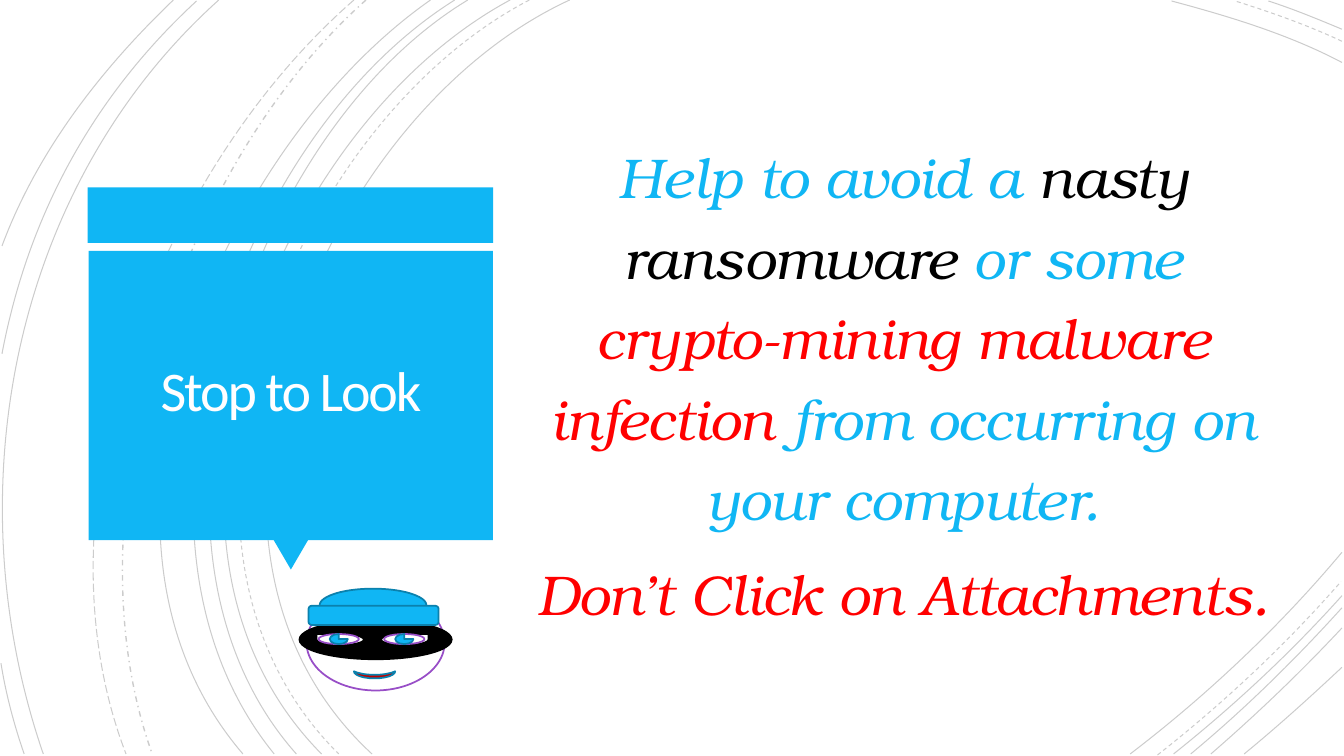
from lxml.etree import SubElement
from pptx import Presentation
from pptx.dml.color import RGBColor
from pptx.enum.dml import MSO_LINE_DASH_STYLE as Dash
from pptx.enum.shapes import MSO_SHAPE as Preset
from pptx.enum.text import MSO_ANCHOR as Anchor, PP_ALIGN as Align
from pptx.oxml.ns import qn
from pptx.util import Pt

PX = 9144  # 100 px to the inch
BLUE = RGBColor(0x10, 0xB6, 0xF4)
DARK_BLUE = RGBColor(0x0B, 0x81, 0xAD)
PURPLE = RGBColor(0x98, 0x4E, 0xC7)
RED = RGBColor(0xFF, 0x00, 0x00)
DARK_RED = RGBColor(0xC0, 0x00, 0x00)
BLACK = RGBColor(0x00, 0x00, 0x00)
WHITE = RGBColor(0xFF, 0xFF, 0xFF)
TITLE_WHITE = RGBColor(0xFF, 0xFE, 0xFF)

ARC_OPACITY = 20  # percent

# Each arc: start, two control points, end
SOLID_ARCS = [
    [(565, 0), (315, 115), (143, 540), (369, 748)],
    [(1331, 62), (1278, 34), (1218, 16), (1162, 1)],
    [(1121, 748), (1197, 690), (1269, 622), (1331, 548)],
    [(506, 0), (270, 127), (110, 537), (319, 748)],
    [(1331, 29), (1307, 19), (1283, 9), (1258, 1)],
    [(1164, 748), (1223, 701), (1280, 648), (1331, 591)],
    [(464, 0), (244, 133), (110, 541), (294, 748)],
    [(1181, 748), (1234, 704), (1284, 655), (1331, 603)],
    [(451, 0), (231, 138), (97, 533), (272, 748)],
    [(1201, 748), (1246, 709), (1290, 667), (1331, 623)],
    [(427, 0), (217, 147), (53, 529), (241, 748)],
    [(1234, 748), (1267, 721), (1299, 692), (1331, 662)],
    [(217, 0), (11, 185), (-46, 490), (43, 748)],
    [(195, 1), (92, 96), (28, 214), (2, 351)],
    [(1, 658), (6, 689), (14, 719), (24, 748)],
    [(172, 0), (100, 69), (37, 150), (2, 244)],
]
DASHED_ARCS = [
    [(525, 0), (285, 125), (123, 537), (336, 748)],
    [(1331, 41), (1297, 25), (1260, 12), (1225, 1)],
    [(1148, 749), (1213, 698), (1275, 640), (1330, 577)],
]
DASH_DOT_ARC = [(363, 0), (176, 166), (65, 509), (151, 748)]
LONG_DASH_ARC = [(351, 0), (157, 169), (29, 499), (125, 748)]


def add_arc(group, arc, dash=Dash.SOLID, width=0.75):
    builder = group.shapes.build_freeform(*arc[0], scale=float(PX))
    builder.add_line_segments(arc[1:], close=False)
    curve = builder.convert_to_shape()
    # Join the three line segments into one cubic curve
    outline = curve.element.spPr.find(".//" + qn("a:path"))
    bend = SubElement(outline, qn("a:cubicBezTo"))
    for segment in outline.findall(qn("a:lnTo")):
        bend.append(segment[0])
        outline.remove(segment)
    curve.shadow.inherit = False
    curve.fill.background()
    curve.line.width = Pt(width)
    curve.line.color.rgb = BLACK
    curve.line.dash_style = dash
    color = curve.element.spPr.find(qn("a:ln")).find(".//" + qn("a:srgbClr"))
    SubElement(color, qn("a:alpha"), val=str(ARC_OPACITY * 1000))


def add_figure(group, preset, frame, fill, outline=None, rotation=0, mirrored=False):
    figure = group.shapes.add_shape(preset, *(n * PX for n in frame))
    figure.shadow.inherit = False
    figure.fill.solid()
    figure.fill.fore_color.rgb = fill
    if outline is None:
        figure.line.fill.background()
    else:
        figure.line.color.rgb = outline
        figure.line.width = Pt(1.25)
    figure.rotation = rotation
    if mirrored:
        figure.element.spPr.xfrm.set("flipH", "1")


def add_text(page, frame, paragraphs, font_name, line_spacing,
             inset=None, space_before=0, italic=False, tracking=0):
    """Each paragraph is a list of (text, colour) spans."""
    box = page.shapes.add_textbox(*(n * PX for n in frame)).text_frame
    box.word_wrap = True
    box.vertical_anchor = Anchor.MIDDLE
    if inset is not None:
        box.margin_left = box.margin_right = inset * PX
        box.margin_top = box.margin_bottom = inset * PX
    for index, spans in enumerate(paragraphs):
        para = box.add_paragraph() if index else box.paragraphs[0]
        para.alignment = Align.CENTER
        para.line_spacing = line_spacing
        para.space_before = Pt(space_before)
        para.font.name = font_name
        para.font.size = Pt(40)
        para.font.italic = italic
        for text, color in spans:
            span = para.add_run()
            span.text = text
            span.font.color.rgb = color
            if tracking:
                span._r.get_or_add_rPr().set("spc", str(round(tracking * 100)))


def add_arcs(page):
    group = page.shapes.add_group_shape()
    for arc in SOLID_ARCS:
        add_arc(group, arc)
    for arc in DASHED_ARCS:
        add_arc(group, arc, Dash.DASH)
    add_arc(group, DASH_DOT_ARC, Dash.DASH_DOT, 1)
    add_arc(group, LONG_DASH_ARC, Dash.LONG_DASH)


def add_title_panel(page):
    group = page.shapes.add_group_shape()
    add_figure(group, Preset.RECTANGLE, (87, 186, 402, 55), BLUE)
    add_figure(group, Preset.ISOSCELES_TRIANGLE, (271, 535, 35, 30), BLUE, rotation=180)
    add_figure(group, Preset.RECTANGLE, (88, 249, 401, 287), BLUE)


def add_bandit(page):
    group = page.shapes.add_group_shape()
    # Head and mask
    add_figure(group, Preset.OVAL, (304, 590, 137, 95), WHITE, PURPLE)
    add_figure(group, Preset.OVAL, (297, 615, 151, 39), BLACK, BLACK)
    add_figure(group, Preset.TEAR, (378, 629, 47, 11), WHITE, BLACK)
    add_figure(group, Preset.TEAR, (314, 629, 47, 11), WHITE, BLACK, mirrored=True)
    # Hat
    add_figure(group, Preset.OVAL, (317, 584, 106, 33), BLUE, DARK_BLUE)
    add_figure(group, Preset.ROUNDED_RECTANGLE, (306, 601, 129, 19), BLUE, DARK_BLUE)
    # Mouth
    add_figure(group, Preset.MOON, (368, 649, 7, 41), DARK_RED, DARK_BLUE, rotation=270)
    # Eyes
    for left in (316, 381):
        add_figure(group, Preset.OVAL, (left, 629, 40, 10), WHITE, PURPLE)
        add_figure(group, Preset.PIE, (left + 11, 629, 18, 10), BLUE, DARK_BLUE)


def main():
    deck = Presentation()
    deck.slide_width, deck.slide_height = 1333 * PX, 750 * PX
    page = deck.slides.add_slide(deck.slide_layouts[6])

    # Background and title
    add_arcs(page)
    add_title_panel(page)
    add_text(page, (97, 257, 383, 269), [[("Stop to Look", TITLE_WHITE)]],
             "Calibri", 0.85, inset=25, tracking=-1.5)

    # Warning
    warning = [
        [("Help to avoid a ", BLUE), ("nasty ransomware ", BLACK), ("or some ", BLUE),
         ("crypto-mining malware infection ", RED),
         ("from occurring on your computer.", BLUE)],
        [("Don’t Click on Attachments.", RED)],
    ]
    add_text(page, (510, 65, 772, 620), warning, "TeX Gyre Bonum", 1.2,
             space_before=10, italic=True)

    add_bandit(page)
    deck.save("out.pptx")


if __name__ == "__main__":
    main()
